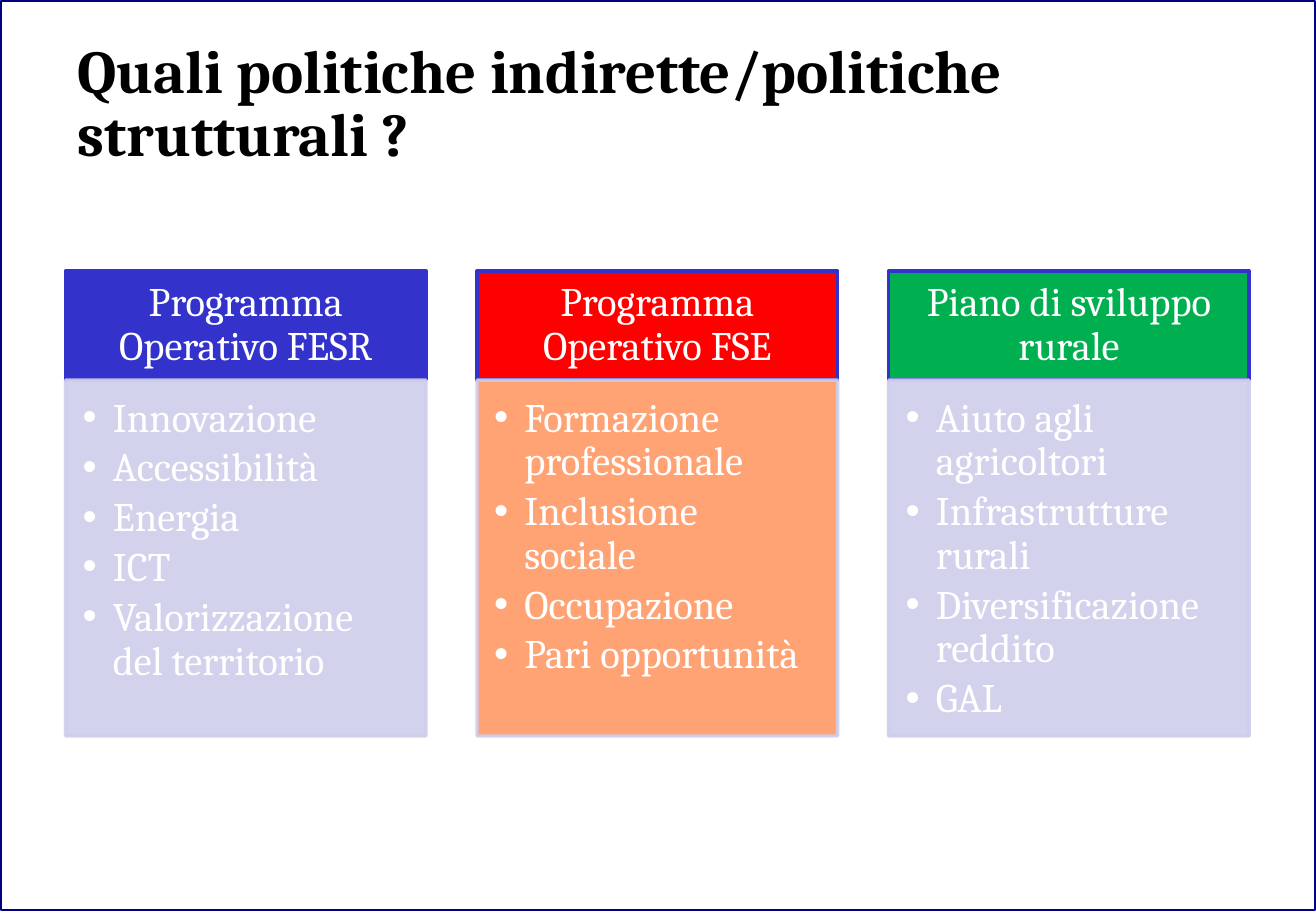
from lxml.etree import SubElement
from pptx import Presentation
from pptx.dml.color import RGBColor
from pptx.enum.shapes import MSO_SHAPE as Shape
from pptx.enum.text import MSO_ANCHOR as Anchor, PP_ALIGN as Align
from pptx.oxml.ns import qn
from pptx.util import Inches, Pt

FONT = "Cambria"
WHITE, BLACK, NAVY = "FFFFFF", "000000", "000080"
BLUE, RED, GREEN = "3333CC", "FF0000", "00B050"
LILAC, ORANGE = "CECEEC", "FF9966"

PLANS = [
    ("Programma Operativo FESR", BLUE, LILAC,
     ["Innovazione", "Accessibilità", "Energia", "ICT",
      "Valorizzazione del territorio"]),
    ("Programma Operativo FSE", RED, ORANGE,
     ["Formazione professionale", "Inclusione sociale", "Occupazione",
      "Pari opportunità"]),
    ("Piano di sviluppo rurale", GREEN, LILAC,
     ["Aiuto agli agricoltori", "Infrastrutture rurali",
      "Diversificazione reddito", "GAL"]),
]


def color(code):
    return RGBColor.from_string(code)


def add_rect(slide, box, fill, line, width, alpha=100):
    rect = slide.shapes.add_shape(Shape.RECTANGLE, *map(Inches, box))
    rect.shadow.inherit = False
    if fill:
        rect.fill.solid()
        rect.fill.fore_color.rgb = color(fill)
    else:
        rect.fill.background()
    rect.line.color.rgb = color(line)
    rect.line.width = Pt(width)
    if alpha < 100:
        for tint in rect._element.spPr.iter(qn("a:srgbClr")):
            SubElement(tint, qn("a:alpha"), val=str(alpha * 1000))
    return rect


def write(shape, lines, size, ink, pads, align=Align.LEFT, anchor=Anchor.TOP,
          spacing=0.9, bold=False):
    """Fill the shape with one paragraph per line; pads run left, top, right, bottom."""
    frame = shape.text_frame
    frame.text = "\n".join(lines)
    frame.word_wrap = True
    frame.vertical_anchor = anchor
    (frame.margin_left, frame.margin_top,
     frame.margin_right, frame.margin_bottom) = map(Inches, pads)
    for para in frame.paragraphs:
        para.alignment = align
        para.line_spacing = spacing
        for run in para.runs:
            run.font.name = FONT
            run.font.size = Pt(size)
            run.font.bold = bold
            run.font.color.rgb = color(ink)
    return frame.paragraphs


def add_bullet(para, indent=0.25):
    props = para._p.get_or_add_pPr()
    props.set("marL", str(Inches(indent)))
    props.set("indent", str(-Inches(indent)))
    SubElement(props, qn("a:buFont"), typeface="Arial")
    SubElement(props, qn("a:buChar"), char="•")


def add_title(slide, box, text):
    title = slide.shapes.add_textbox(*map(Inches, box))
    write(title, [text], 36, BLACK, (0.1, 0.05, 0.1, 0.05),
          spacing=0.87, bold=True)


def add_plan(slide, box, plan, top=0.9):
    """A coloured heading, top inches tall, above a panel of bullets."""
    name, head, body, items = plan
    x, y, w, h = box
    header = add_rect(slide, (x, y, w, top), head, BLUE, 2)
    write(header, [name], 24, WHITE, (0.19, 0.11, 0.19, 0.11),
          Align.CENTER, Anchor.MIDDLE)
    panel = add_rect(slide, (x, y + top, w, h - top), body, LILAC, 2, 90)
    paras = write(panel, items, 24, WHITE, (0.14, 0.14, 0.19, 0.21))
    for para in paras:
        para.space_after = Pt(3.6)
        add_bullet(para)


def add_plans(slide, box, gap=0.42):
    x, y, w, h = box
    wide = (w - gap * (len(PLANS) - 1)) / len(PLANS)
    for i, plan in enumerate(PLANS):
        add_plan(slide, (x + i * (wide + gap), y, wide, h), plan)


def main():
    deck = Presentation()
    deck.slide_width, deck.slide_height = Inches(10.84), Inches(7.5)
    slide = deck.slides.add_slide(deck.slide_layouts[6])
    add_rect(slide, (0.01, 0.01, 10.82, 7.48), None, NAVY, 1)
    add_title(slide, (0.54, 0.3, 9.75, 1.25),
              "Quali politiche indirette/politiche strutturali ?")
    add_plans(slide, (0.54, 2.23, 9.75, 3.83))
    deck.save("out.pptx")


if __name__ == "__main__":
    main()
